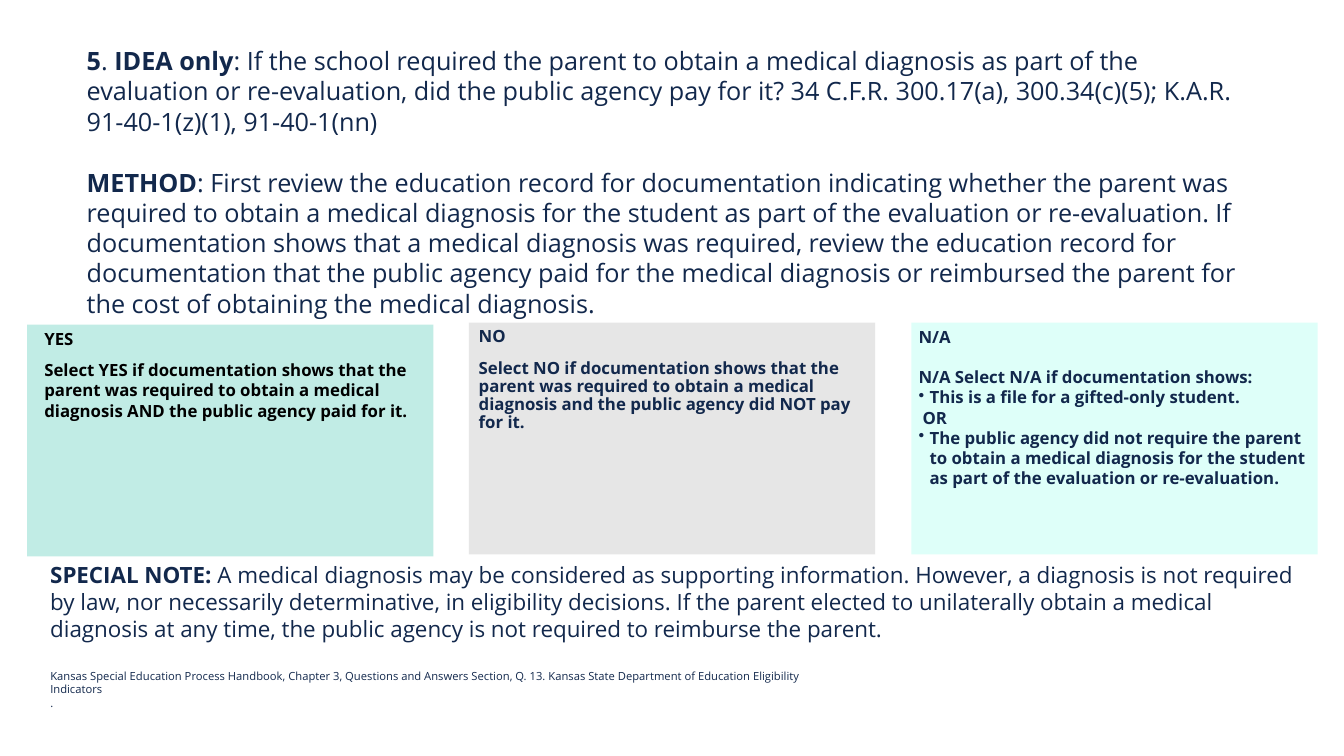
from dataclasses import dataclass

from lxml import etree
from pptx import Presentation
from pptx.dml.color import RGBColor
from pptx.enum.shapes import MSO_SHAPE
from pptx.enum.text import MSO_ANCHOR, MSO_AUTO_SIZE, PP_ALIGN
from pptx.oxml.ns import qn
from pptx.util import Inches, Pt

RECTANGLE = MSO_SHAPE.RECTANGLE
TOP = MSO_ANCHOR.TOP
NO_AUTOFIT = MSO_AUTO_SIZE.NONE
LEFT = PP_ALIGN.LEFT


@dataclass(frozen=True)
class Theme:
    font: str = "Open Sans"
    navy: RGBColor = RGBColor(0x12, 0x28, 0x4C)
    black: RGBColor = RGBColor(0, 0, 0)
    mint: RGBColor = RGBColor(0xC1, 0xEC, 0xE5)
    gray: RGBColor = RGBColor(0xE6, 0xE6, 0xE6)
    aqua: RGBColor = RGBColor(0xDE, 0xFF, 0xF9)
    question_size: Pt = Pt(18)
    note_size: Pt = Pt(16)
    answer_size: Pt = Pt(12)
    source_size: Pt = Pt(8)


THEME = Theme()


def write_paragraphs(frame, paragraphs, size, color=THEME.navy):
    """Fill a frame with paragraphs, each a list of (text, bold) runs."""
    frame.word_wrap = True
    frame.auto_size = NO_AUTOFIT
    frame.vertical_anchor = TOP
    for index, runs in enumerate(paragraphs):
        paragraph = frame.add_paragraph() if index else frame.paragraphs[0]
        paragraph.alignment = LEFT
        paragraph.font.name = THEME.font
        paragraph.font.size = size
        paragraph.font.color.rgb = color
        bold_values = {bold for _, bold in runs}
        if len(bold_values) == 1:
            paragraph.font.bold = bold_values.pop()
        for text, bold in runs:
            run = paragraph.add_run()
            run.text = text
            if len(runs) > 1:
                run.font.bold = bold


def indent_paragraph(paragraph, margin, bullet=False):
    properties = paragraph._p.get_or_add_pPr()
    properties.set("marL", str(margin))
    properties.set("indent", str(-margin if bullet else 0))
    if bullet:
        character = etree.Element(qn("a:buChar"), char="•")
        properties.insert_element_before(character, "a:tabLst", "a:defRPr", "a:extLst")


presentation = Presentation()
presentation.slide_width = Inches(13.33)
presentation.slide_height = Inches(7.5)
slide = presentation.slides.add_slide(presentation.slide_layouts[5])

# Question and review method
title = slide.shapes.title
title.left, title.top = Inches(0.76), Inches(0.4)
title.width, title.height = Inches(11.62), Inches(2.83)
write_paragraphs(
    title.text_frame,
    [
        [
            ("5", True),
            (". ", False),
            ("IDEA only", True),
            (": If the school required the parent to obtain a medical diagnosis as part of the "
             "evaluation or re-evaluation, did the public agency pay for it? 34 C.F.R. 300.17(a), "
             "300.34(c)(5); K.A.R. 91-40-1(z)(1), 91-40-1(nn)", False),
        ],
        [
            ("METHOD", True),
            (": First review the education record for documentation indicating whether the parent "
             "was required to obtain a medical diagnosis for the student as part of the evaluation "
             "or re-evaluation. If documentation shows that a medical diagnosis was required, review "
             "the education record for documentation that the public agency paid for the medical "
             "diagnosis or reimbursed the parent for the cost of obtaining the medical diagnosis.",
             False),
        ],
    ],
    THEME.question_size,
)
title.text_frame.paragraphs[1].space_before = Pt(22)

# Answer boxes: left, top, fill, text colour, left inset, top inset, line spacing, gap, lines
answers = [
    (0.27, 3.22, THEME.mint, THEME.black, 0.17, 0.04, 1.0, 8, [
        "YES",
        "Select YES if documentation shows that the parent was required to obtain a medical "
        "diagnosis AND the public agency paid for it.",
    ]),
    (4.65, 3.2, THEME.gray, THEME.navy, 0.1, 0.05, 0.9, 10, [
        "NO",
        "Select NO if documentation shows that the parent was required to obtain a medical "
        "diagnosis and the public agency did NOT pay for it.",
    ]),
    (9.04, 3.2, THEME.aqua, THEME.navy, 0.07, 0.04, 1.0, 14.5, [
        "N/A",
        "N/A Select N/A if documentation shows:",
        "This is a file for a gifted-only student.",
        "OR",
        "The public agency did not require the parent to obtain a medical diagnosis for the "
        "student as part of the evaluation or re-evaluation.",
    ]),
]
for left, top, fill, color, inset_left, inset_top, spacing, gap, lines in answers:
    box = slide.shapes.add_shape(
        RECTANGLE, Inches(left), Inches(top), Inches(4.03), Inches(2.3))
    box.shadow.inherit = False
    box.fill.solid()
    box.fill.fore_color.rgb = fill
    box.line.fill.background()
    frame = box.text_frame
    frame.margin_left, frame.margin_right = Inches(inset_left), Inches(0.07)
    frame.margin_top = frame.margin_bottom = Inches(inset_top)
    write_paragraphs(frame, [[(line, True)] for line in lines], THEME.answer_size, color)
    for paragraph in frame.paragraphs:
        paragraph.line_spacing = spacing
    frame.paragraphs[1].space_before = Pt(gap)

not_applicable = frame.paragraphs
indent_paragraph(not_applicable[2], Inches(0.11), bullet=True)
indent_paragraph(not_applicable[3], Inches(0.04))
indent_paragraph(not_applicable[4], Inches(0.11), bullet=True)

# Special note and source line
footers = [
    (5.52, 12.53, 0.91, THEME.note_size, [[
        ("SPECIAL NOTE: ", True),
        ("A medical diagnosis may be considered as supporting information. However, a diagnosis is "
         "not required by law, nor necessarily determinative, in eligibility decisions. If the "
         "parent elected to unilaterally obtain a medical diagnosis at any time, the public agency "
         "is not required to reimburse the parent.", False),
    ]]),
    (6.59, 7.95, 0.37, THEME.source_size, [
        [("Kansas Special Education Process Handbook, Chapter 3, Questions and Answers Section, "
          "Q. 13. Kansas State Department of Education Eligibility Indicators", False)],
        [(".", False)],
    ]),
]
for top, width, height, size, paragraphs in footers:
    text_box = slide.shapes.add_textbox(
        Inches(0.4), Inches(top), Inches(width), Inches(height))
    write_paragraphs(text_box.text_frame, paragraphs, size)

presentation.save("out.pptx")
